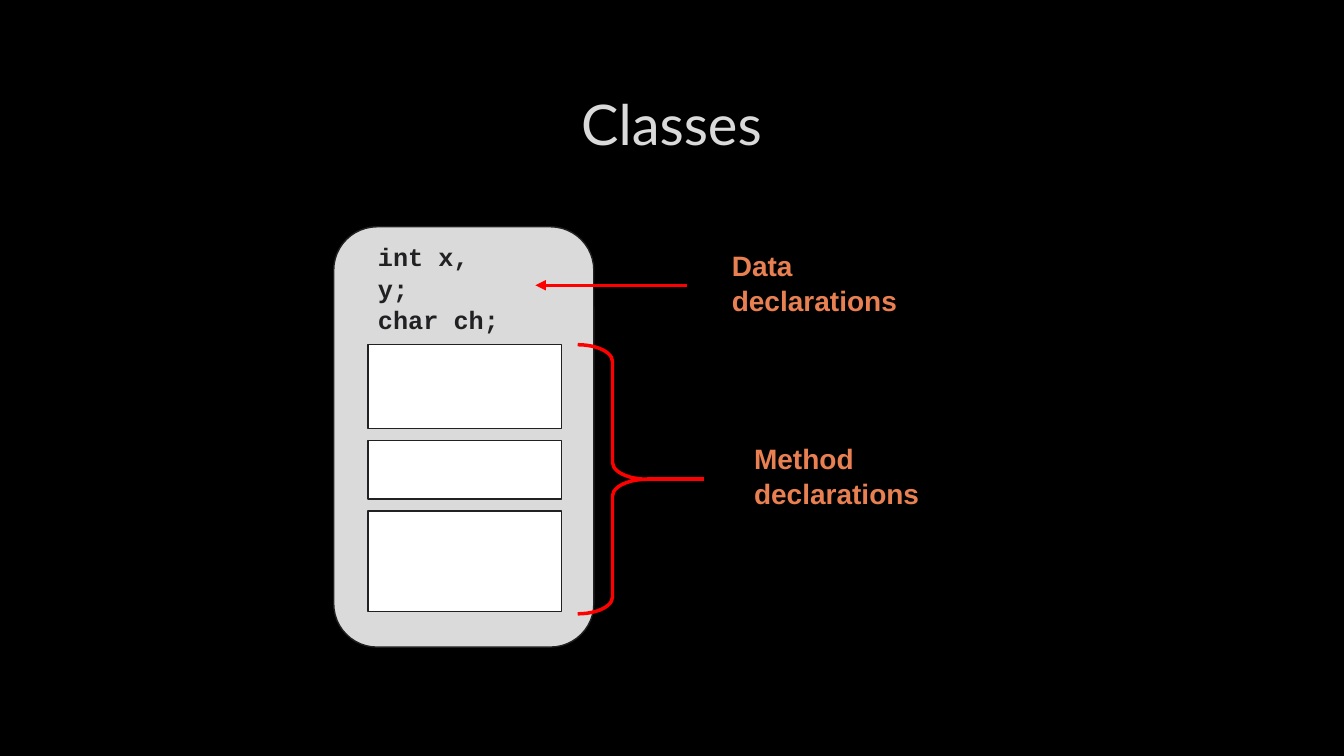
from lxml.etree import SubElement
from pptx import Presentation
from pptx.dml.color import RGBColor
from pptx.enum.shapes import MSO_CONNECTOR, MSO_SHAPE
from pptx.enum.text import MSO_ANCHOR, PP_ALIGN
from pptx.oxml.ns import qn
from pptx.util import Inches, Pt

INK, PALE, WHITE, RED, ORANGE = "212123", "DADADA", "FFFFFF", "FF0000", "E98052"


def rgb(value):
    """Turn a hex string into a colour."""
    return RGBColor.from_string(value)


class ClassSlide:
    """Holds the slide and draws its elements in one style."""

    def __init__(self, prs):
        """Add a title slide with a black background."""
        self.s = prs.slides.add_slide(prs.slide_layouts[5])
        fill = self.s.background.fill
        fill.solid()
        fill.fore_color.rgb = rgb("000000")

    def group(self):
        """Add an empty group and return its shapes."""
        return self.s.shapes.add_group_shape().shapes

    def set_text(self, sp, text, font, size, color, bold=True, align=PP_ALIGN.LEFT):
        """Fill a shape with formatted text."""
        tf = sp.text_frame
        tf.text = text
        tf.word_wrap = True
        tf.vertical_anchor = MSO_ANCHOR.MIDDLE
        for p in tf.paragraphs:
            p.alignment = align
            p.line_spacing = 1.05
            for r in p.runs:
                r.font.name, r.font.size, r.font.bold = font, Pt(size), bold
                r.font.color.rgb = rgb(color)

    def title(self, text, *box):
        """Place and format the title."""
        sp = self.s.shapes.title
        sp.left, sp.top, sp.width, sp.height = map(Inches, box)
        self.set_text(sp, text, "Lato", 40, PALE, False, PP_ALIGN.CENTER)

    def text(self, shapes, text, box, font, size, color):
        """Add a bold text box."""
        sp = shapes.add_textbox(*map(Inches, box))
        self.set_text(sp, text, font, size, color)

    def shape(self, shapes, kind, box, fill=None, line=INK, width=1):
        """Add a preset shape, without fill if none is given."""
        sp = shapes.add_shape(kind, *map(Inches, box))
        sp.shadow.inherit = False
        if fill:
            sp.fill.solid()
            sp.fill.fore_color.rgb = rgb(fill)
        else:
            sp.fill.background()
        sp.line.color.rgb = rgb(line)
        sp.line.width = Pt(width)
        return sp

    def line(self, shapes, x1, x2, y, arrow=False):
        """Add a level red line, with an arrowhead at its end if wanted."""
        sp = shapes.add_connector(MSO_CONNECTOR.STRAIGHT, *map(Inches, (x1, y, x2, y)))
        sp.line.color.rgb = rgb(RED)
        sp.line.width = Pt(2.5)
        sp_pr = sp._element.spPr
        if arrow:
            SubElement(sp_pr.find(qn("a:ln")), qn("a:tailEnd"), type="triangle")
        SubElement(sp_pr, qn("a:effectLst"))


def main():
    """Build the slide and save it."""
    prs = Presentation()
    prs.slide_width, prs.slide_height = Inches(13.33), Inches(7.5)
    slide = ClassSlide(prs)
    slide.title("Classes", 1, 0.67, 11.32, 1.06)

    body = slide.group()
    slide.shape(body, MSO_SHAPE.FLOWCHART_ALTERNATE_PROCESS, (3.31, 2.25, 2.58, 4.17), PALE)
    top = 3.42
    for height in (0.83, 0.58, 1):
        slide.shape(body, MSO_SHAPE.RECTANGLE, (3.65, top, 1.92, height), WHITE)
        top += height + 0.12
    slide.text(body, "int x, y;\nchar ch;", (3.65, 2.5, 1.5, 0.7), "Courier New", 18, INK)

    labels = (("Data declarations", 7.16, 2.58, 2.4), ("Method declarations", 7.38, 4.5, 2.75))
    for label, left, top, width in labels:
        slide.text(slide.s.shapes, label, (left, top, width, 0.43), "Arial", 20, ORANGE)
    slide.line(slide.s.shapes, 6.81, 5.31, 2.83, arrow=True)

    brace = slide.group()
    sp = slide.shape(brace, MSO_SHAPE.RIGHT_BRACE, (5.73, 3.42, 0.69, 2.67), line=RED, width=2.5)
    sp.adjustments[0] = 0.242
    slide.line(brace, 6.98, 6.42, 4.75)

    prs.save("out.pptx")


if __name__ == "__main__":
    main()
